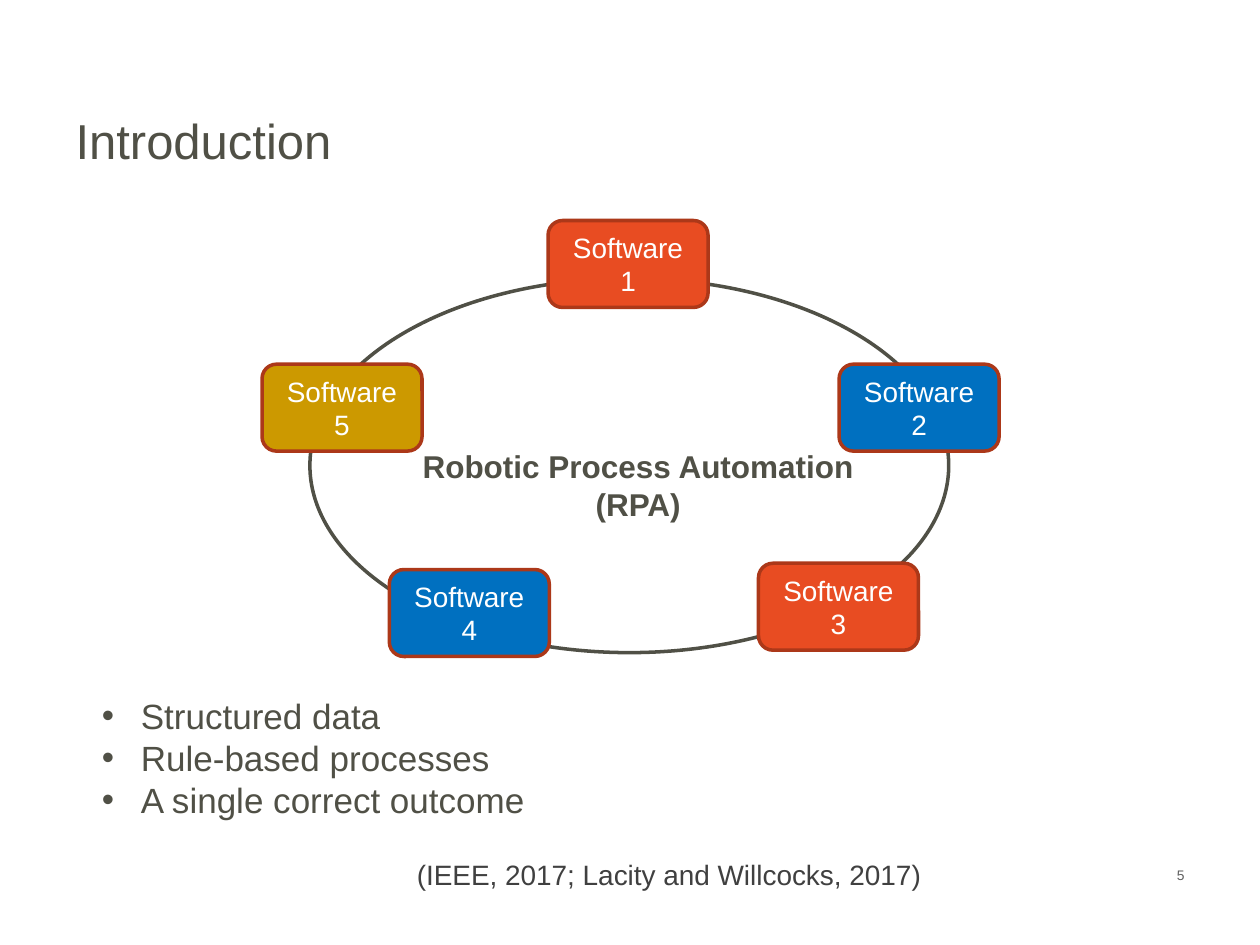
from lxml.etree import SubElement
from pptx import Presentation
from pptx.dml.color import RGBColor
from pptx.enum.shapes import MSO_SHAPE
from pptx.enum.text import MSO_ANCHOR, PP_ALIGN
from pptx.oxml.ns import qn
from pptx.util import Inches, Pt

FONT = "Arial"
INK, WHITE = "505046", "FFFFFF"
ORANGE, BLUE, GOLD, BORDER = "E84C22", "0070C0", "CC9900", "AC3819"
NODE_SIZE = (1.27, 0.69)
# Label, left, top and fill of each program on the ring
NODES = [
    ("Software 1", 4.35, 1.75, ORANGE),
    ("Software 5", 2.08, 2.89, GOLD),
    ("Software 2", 6.66, 2.89, BLUE),
    ("Software 4", 3.09, 4.52, BLUE),
    ("Software 3", 6.02, 4.47, ORANGE),
]
FEATURES = ["Structured data", "Rule-based processes", "A single correct outcome"]


def color(value):
    return RGBColor.from_string(value)


def add_bullet(para):
    properties = para._p.get_or_add_pPr()
    properties.set("marL", str(Inches(0.31)))
    properties.set("indent", str(Inches(-0.31)))
    SubElement(properties, qn("a:buFont"), typeface=FONT)
    SubElement(properties, qn("a:buChar"), char="•")


def write(frame, lines, size, ink=INK, align=PP_ALIGN.LEFT, bold=False, bullets=False):
    """Fill a text frame with one paragraph per line."""
    for index, line in enumerate(lines):
        para = frame.paragraphs[0] if index == 0 else frame.add_paragraph()
        if bullets:
            add_bullet(para)
        para.alignment = align
        span = para.add_run()
        span.text = line
        for name, value in {"name": FONT, "size": Pt(size), "bold": bold}.items():
            setattr(span.font, name, value)
        span.font.color.rgb = color(ink)


def add_title(page, text):
    title = page.shapes.title
    place = {"left": 0.5, "top": 0.67, "width": 9, "height": 0.88}
    for name, value in place.items():
        setattr(title, name, Inches(value))
    title.text_frame.vertical_anchor = MSO_ANCHOR.MIDDLE
    write(title.text_frame, [text], 28)


def add_text(page, place, lines, size, wrap=True, **style):
    box = page.shapes.add_textbox(*map(Inches, place))
    box.text_frame.word_wrap = wrap
    write(box.text_frame, lines, size, **style)


def add_outline(page, kind, place, line, fill=None):
    shape = page.shapes.add_shape(kind, *map(Inches, place))
    shape.shadow.inherit = False
    shape.line.color.rgb = color(line)
    shape.line.width = Pt(2)
    if fill:
        shape.fill.solid()
        shape.fill.fore_color.rgb = color(fill)
    else:
        shape.fill.background()
    return shape


def add_node(page, label, left, top, fill):
    place = (left, top, *NODE_SIZE)
    node = add_outline(page, MSO_SHAPE.ROUNDED_RECTANGLE, place, BORDER, fill)
    node.text_frame.vertical_anchor = MSO_ANCHOR.MIDDLE
    write(node.text_frame, [label], 16, WHITE, PP_ALIGN.CENTER)


def main():
    deck = Presentation()
    deck.slide_width, deck.slide_height = Inches(10), Inches(7.5)
    page = deck.slides.add_slide(deck.slide_layouts[5])

    # Title and page number
    add_title(page, "Introduction")
    add_text(page, (7.17, 6.83, 2.33, 0.52), ["5"], 7.9,
             ink="5F5F5F", align=PP_ALIGN.RIGHT)

    # Ring of programs around the topic
    add_outline(page, MSO_SHAPE.OVAL, (2.46, 2.21, 5.07, 2.97), INK)
    for node in NODES:
        add_node(page, *node)
    add_text(page, (3.23, 3.5, 3.67, 0.71), ["Robotic Process Automation (RPA)"], 18,
             align=PP_ALIGN.CENTER, bold=True)

    # Features and citation
    add_text(page, (0.71, 5.46, 5, 1.11), FEATURES, 20, bullets=True)
    add_text(page, (3.21, 6.76, 4.26, 0.37),
             ["(IEEE, 2017; Lacity and Willcocks, 2017)"], 16, wrap=False, ink="404040")

    deck.save("out.pptx")


if __name__ == "__main__":
    main()
